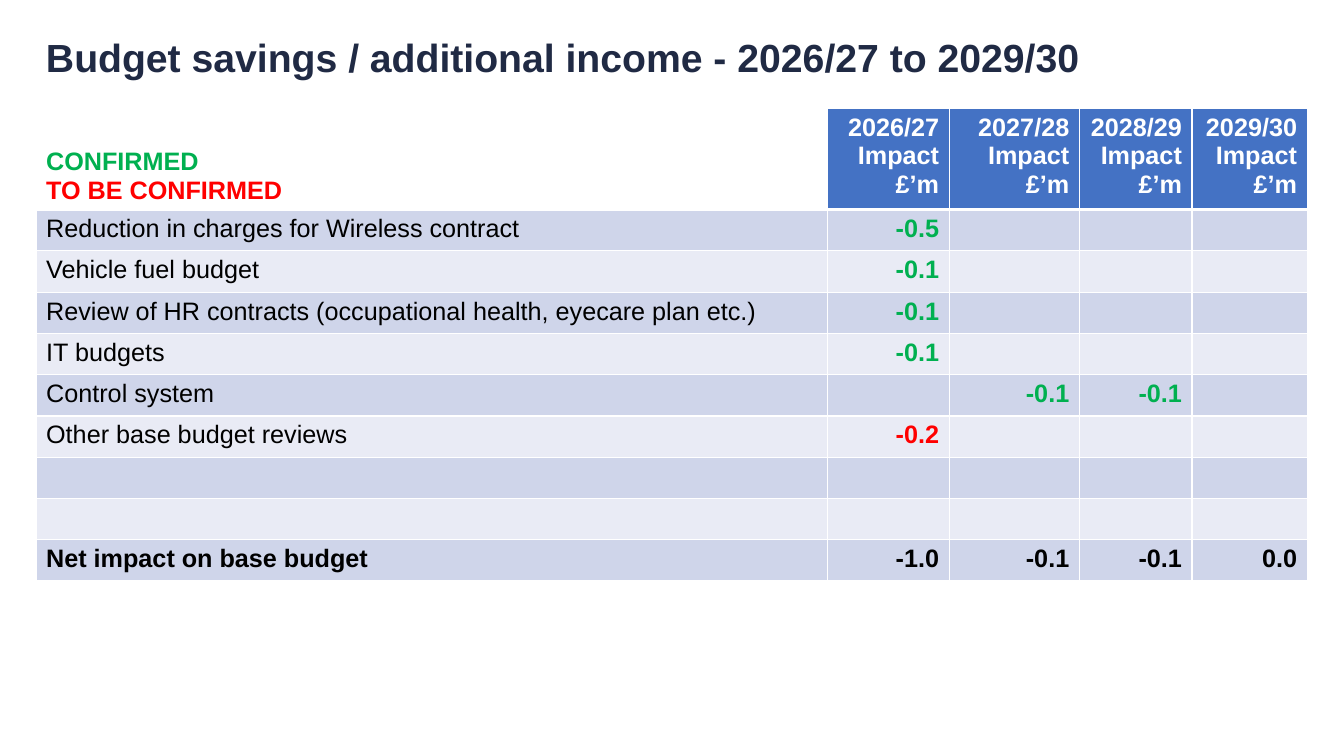
from lxml import etree
from pptx import Presentation
from pptx.dml.color import RGBColor
from pptx.enum.text import MSO_ANCHOR, PP_ALIGN
from pptx.oxml.ns import qn
from pptx.util import Cm, Pt

LEFT, RIGHT = PP_ALIGN.LEFT, PP_ALIGN.RIGHT
TOP, MIDDLE, BOTTOM = MSO_ANCHOR.TOP, MSO_ANCHOR.MIDDLE, MSO_ANCHOR.BOTTOM

TITLE = "Budget savings / additional income - 2026/27 to 2029/30"
KEY = [("CONFIRMED", "green"), ("TO BE CONFIRMED", "red")]
YEARS = ["2026/27", "2027/28", "2028/29", "2029/30"]
UNITS = ["Impact", "£’m"]
ITEMS = [
    ("Reduction in charges for Wireless contract", ["-0.5", "", "", ""], "green"),
    ("Vehicle fuel budget", ["-0.1", "", "", ""], "green"),
    ("Review of HR contracts (occupational health, eyecare plan etc.)",
     ["-0.1", "", "", ""], "green"),
    ("IT budgets", ["-0.1", "", "", ""], "green"),
    ("Control system", ["", "-0.1", "-0.1", ""], "green"),
    ("Other base budget reviews", ["-0.2", "", "", ""], "red"),
    ("", ["", "", "", ""], "black"),
    ("", ["", "", "", ""], "black"),
    ("Net impact on base budget", ["-1.0", "-0.1", "-0.1", "0.0"], "black"),
]
COLORS = {"navy": "202A44", "green": "00B050", "red": "FF0000", "black": "000000",
          "white": "FFFFFF", "blue": "4472C4", "dark": "CFD5EA", "light": "E9EBF5"}
WIDTHS = [19.94, 3.07, 3.28, 2.84, 2.9]
HEAD, ROW = 2.41, 1.04
EDGE, START = 0.91, 2.74


def write(frame, lines, align=LEFT, size=18, bold=True):
    for i, (text, color) in enumerate(lines):
        para = frame.paragraphs[0] if i == 0 else frame.add_paragraph()
        para.alignment = align
        if text:
            para.add_run().text = text
        form = {"name": "Arial", "size": Pt(size), "bold": bold}
        for name, value in form.items():
            setattr(para.font, name, value)
            for run in para.runs:
                setattr(run.font, name, value)
        for run in para.runs:
            run.font.color.rgb = RGBColor.from_string(COLORS[color])


def border(cell, widths):
    props = cell._tc.get_or_add_tcPr()
    for side, width in widths.items():
        line = etree.SubElement(props, qn("a:ln" + side), w=str(Pt(width)))
        fill = etree.SubElement(line, qn("a:solidFill"))
        etree.SubElement(fill, qn("a:srgbClr"), val=COLORS["white"])


def put(cell, row, lines, fill, align=LEFT, bold=True, anchor=TOP):
    border(cell, {"L": 1, "R": 1, "T": 3 if row == 1 else 1, "B": 3 if row == 0 else 1})
    if fill:
        cell.fill.solid()
        cell.fill.fore_color.rgb = RGBColor.from_string(COLORS[fill])
    else:
        cell.fill.background()
    cell.vertical_anchor = anchor
    write(cell.text_frame, lines, align, bold=bold)


def add_title(slide):
    box = slide.shapes.add_textbox(Cm(EDGE), Cm(0.3), Cm(29.21), Cm(2.41))
    frame = box.text_frame
    for name, value in {"word_wrap": True, "vertical_anchor": MIDDLE}.items():
        setattr(frame, name, value)
    write(frame, [(TITLE, "navy")], size=28)
    frame.paragraphs[0].line_spacing = 0.9


def add_budget(slide):
    count = len(ITEMS)
    frame = slide.shapes.add_table(count + 1, len(WIDTHS), Cm(EDGE), Cm(START),
                                   Cm(sum(WIDTHS)), Cm(HEAD + ROW * count))
    table = frame.table
    for name in ("first_row", "horz_banding"):
        setattr(table, name, False)
    for col, width in zip(table.columns, WIDTHS):
        col.width = Cm(width)
    for row, height in zip(table.rows, [HEAD] + [ROW] * count):
        row.height = Cm(height)
    put(table.cell(0, 0), 0, KEY, None, anchor=BOTTOM)
    for c, year in enumerate(YEARS, 1):
        lines = [(text, "white") for text in [year] + UNITS]
        put(table.cell(0, c), 0, lines, "blue", RIGHT)
    for r, (label, values, color) in enumerate(ITEMS, 1):
        fill = "dark" if r % 2 else "light"
        put(table.cell(r, 0), r, [(label, "black")], fill, bold=r == count)
        for c, value in enumerate(values, 1):
            put(table.cell(r, c), r, [(value, color)], fill, RIGHT)


def main():
    """Build the budget savings slide."""
    deck = Presentation()
    deck.slide_width, deck.slide_height = Cm(33.87), Cm(19.05)
    slide = deck.slides.add_slide(deck.slide_layouts[6])
    add_title(slide)
    add_budget(slide)
    deck.save("out.pptx")


if __name__ == "__main__":
    main()
